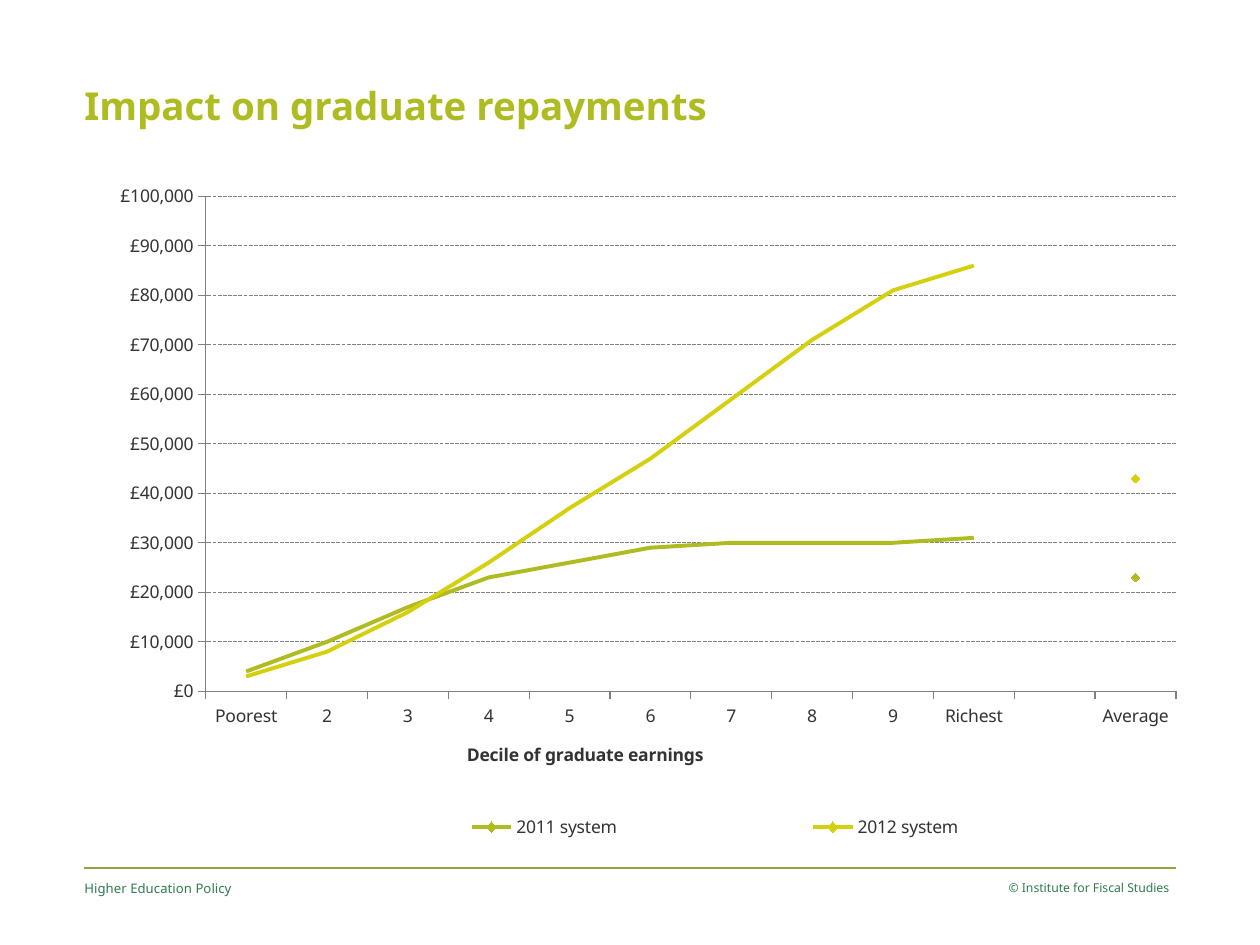
from pptx import Presentation
from pptx.chart.data import CategoryChartData
from pptx.dml.color import RGBColor
from pptx.enum import chart as kinds, dml, shapes, text
from pptx.oxml import parse_xml
from pptx.oxml.ns import nsdecls, qn
from pptx.util import Inches, Pt

FONT = "Noto Sans"
LIME = RGBColor(0xAF, 0xBC, 0x21)
YELLOW = RGBColor(0xD4, 0xD0, 0x0E)
RULE = RGBColor(0x93, 0xA4, 0x45)
GREEN = RGBColor(0x31, 0x7B, 0x52)
DARK = RGBColor(0x33, 0x33, 0x33)
GREY = RGBColor(0x80, 0x80, 0x80)

MARGIN = 0.67
RIGHT = 10 - MARGIN
DECILES = ["Poorest", *map(str, range(2, 10)), "Richest"]
CATEGORIES = DECILES + ["", "Average"]
REPAYMENTS = {
    "Series 1": [4000, 10000, 17000, 23000, 26000, 29000, 30000, 30000, 30000, 31000],
    "Series 2": [3000, 8000, 16000, 26000, 37000, 47000, 59000, 71000, 81000, 86000],
}
AVERAGES = {"2011 system": 23000, "2012 system": 43000}


def style_font(font, size, color, bold=False):
    font.name, font.size, font.bold = FONT, Pt(size), bold
    font.color.rgb = color


def fill_frame(shape, words, size, color, bold=False, align=text.PP_ALIGN.LEFT, right_inset=0):
    frame = shape.text_frame
    frame.word_wrap = True
    frame.auto_size = text.MSO_AUTO_SIZE.NONE
    frame.vertical_anchor = text.MSO_ANCHOR.TOP
    frame.margin_left = frame.margin_top = frame.margin_bottom = 0
    frame.margin_right = Inches(right_inset)
    paragraph = frame.paragraphs[0]
    paragraph.text = words
    paragraph.alignment = align
    style_font(paragraph.font, size, color, bold)


def add_title(slide, words):
    title = slide.shapes.title
    title.left, title.top, title.width, title.height = map(Inches, (MARGIN, 0.65, 7.17, 0.44))
    fill_frame(title, words, 22, LIME, bold=True)


def add_footer(slide, left, width, words, size, **options):
    box = slide.shapes.add_textbox(*map(Inches, (left, 6.99, width, 0.4)))
    fill_frame(box, words, size, GREEN, **options)


def add_rule(slide, top):
    rule = slide.shapes.add_connector(
        shapes.MSO_CONNECTOR.STRAIGHT, *map(Inches, (MARGIN, top, RIGHT, top)))
    rule.line.color.rgb = RULE
    rule.line.width = Pt(0.75)
    rule._element.spPr.append(parse_xml(f"<a:effectLst {nsdecls('a')}/>"))


def place_before(sibling, inner=False, **shares):
    parent = sibling.getparent()
    for layout in parent.findall(qn("c:layout")):
        parent.remove(layout)
    target = '<c:layoutTarget val="inner"/>' if inner else ""
    modes = "".join(f'<c:{key}Mode val="edge"/>' for key in "xy")
    values = "".join(f'<c:{key} val="{share}"/>' for key, share in shares.items())
    sibling.addprevious(parse_xml(
        f"<c:layout {nsdecls('c')}><c:manualLayout>{target}{modes}{values}"
        "</c:manualLayout></c:layout>"))


def style_axis(axis):
    axis.major_tick_mark = kinds.XL_TICK_MARK.OUTSIDE
    axis.minor_tick_mark = kinds.XL_TICK_MARK.NONE
    axis.format.line.color.rgb = GREY
    axis.format.line.width = Pt(0.75)
    style_font(axis.tick_labels.font, 10, DARK)


def style_axes(chart):
    categories, values = chart.category_axis, chart.value_axis
    style_axis(categories)
    style_axis(values)
    categories.has_major_gridlines = False
    categories.tick_label_position = kinds.XL_TICK_LABEL_POSITION.LOW
    paragraph = categories.axis_title.text_frame.paragraphs[0]
    paragraph.text = "Decile of graduate earnings"
    style_font(paragraph.font, 10, DARK, bold=True)
    place_before(categories.axis_title._element.find(qn("c:overlay")), x=0.35, y=0.83)
    values.minimum_scale, values.maximum_scale, values.major_unit = 0, 100000, 10000
    values.tick_labels.number_format = '"£"#,##0'
    values.tick_labels.number_format_is_linked = False
    grid = values.major_gridlines.format.line
    grid.color.rgb = GREY
    grid.width = Pt(0.75)
    grid.dash_style = dml.MSO_LINE.SQUARE_DOT


def style_series(series, color):
    series.smooth = False
    series.format.line.color.rgb = color
    series.format.line.width = Pt(2.25)
    marker = series.marker
    if series.name in AVERAGES:
        marker.style = kinds.XL_MARKER_STYLE.DIAMOND
        marker.size = 5
        marker.format.fill.solid()
        marker.format.fill.fore_color.rgb = color
        marker.format.line.color.rgb = color
    else:
        marker.style = kinds.XL_MARKER_STYLE.NONE


def style_legend(chart):
    chart.has_legend = True
    legend = chart.legend
    legend.position = kinds.XL_LEGEND_POSITION.BOTTOM
    legend.include_in_layout = False
    style_font(legend.font, 10, DARK)
    element = legend._element
    place_before(element.find(qn("c:overlay")), x=0.19, y=0.92, w=0.76, h=0.07)
    for index in range(len(REPAYMENTS)):
        element.find(qn("c:layout")).addprevious(parse_xml(
            f'<c:legendEntry {nsdecls("c")}><c:idx val="{index}"/>'
            '<c:delete val="1"/></c:legendEntry>'))


def add_repayment_chart(slide):
    data = CategoryChartData()
    data.categories = CATEGORIES
    for name, amounts in REPAYMENTS.items():
        data.add_series(name, amounts + [None, None])
    for name, average in AVERAGES.items():
        data.add_series(name, [None] * (len(CATEGORIES) - 1) + [average])
    chart = slide.shapes.add_chart(
        kinds.XL_CHART_TYPE.LINE_MARKERS, *map(Inches, (0.51, 1.15, 9.06, 5.67)), data).chart
    chart.has_title = False
    style_font(chart.font, 10, DARK)
    plot = chart.plots[0]
    plot.vary_by_categories = False
    place_before(plot._element, inner=True, x=0.124, y=0.072, w=0.85, h=0.693)
    for series, color in zip(plot.series, [LIME, YELLOW] * 2):
        style_series(series, color)
    style_axes(chart)
    style_legend(chart)


def main():
    presentation = Presentation()
    presentation.slide_width, presentation.slide_height = Inches(10), Inches(7.5)
    slide = presentation.slides.add_slide(presentation.slide_layouts[5])
    add_rule(slide, 6.89)
    add_title(slide, "Impact on graduate repayments")
    add_footer(slide, RIGHT - 1.73, 1.73, "© Institute for Fiscal Studies", 7,
               align=text.PP_ALIGN.RIGHT, right_inset=0.05)
    add_footer(slide, MARGIN, 3.17, "Higher Education Policy", 7.5)
    add_repayment_chart(slide)
    presentation.save("out.pptx")


if __name__ == "__main__":
    main()
